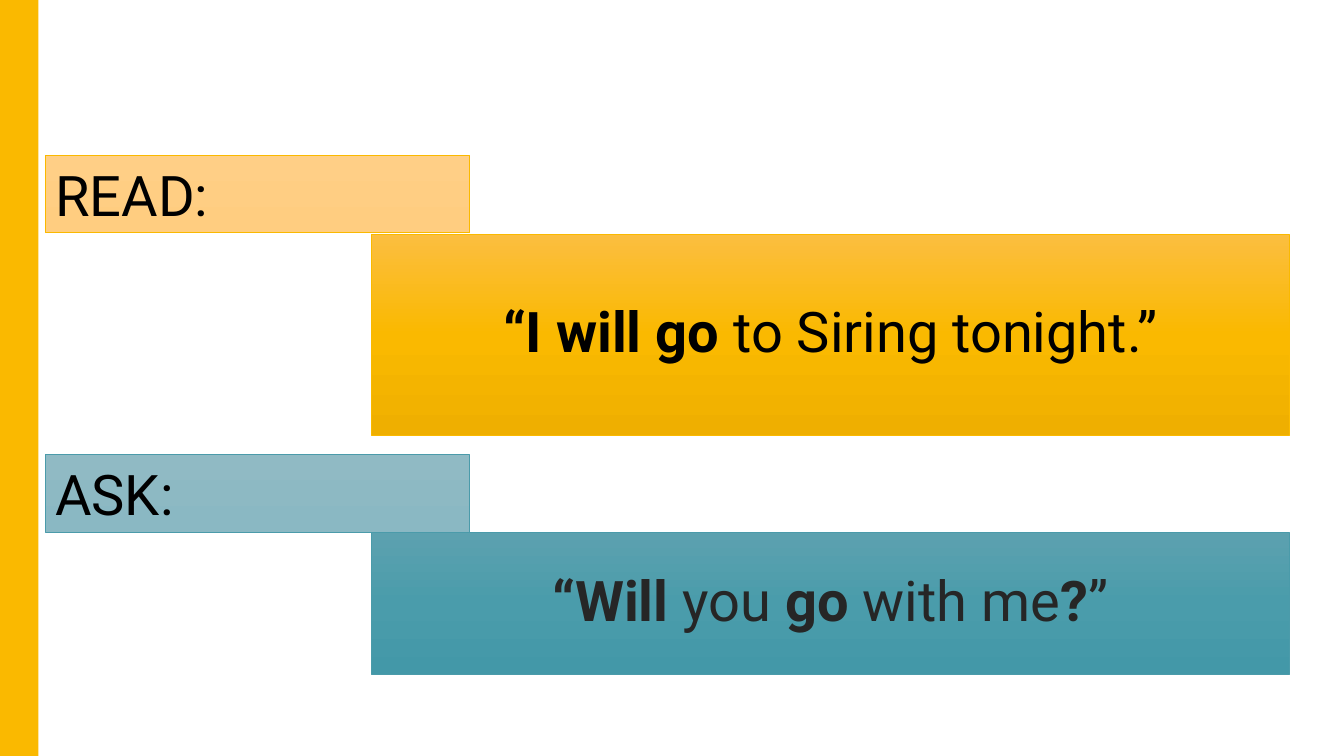
"""Build a slide that pairs a READ statement with an ASK question."""
from copy import deepcopy
from dataclasses import dataclass

from pptx import Presentation
from pptx.dml.color import RGBColor
from pptx.enum import shapes, text
from pptx.oxml.ns import qn
from pptx.util import Inches, Pt


@dataclass(frozen=True)
class Theme:
    font: str = "Roboto"
    size: int = 40
    edge: float = 0.5
    black: str = "000000"
    charcoal: str = "262626"
    amber: str = "FAB900"
    teal: str = "4B9BAA"
    amber_label: tuple = ("FFCF86", "FFCD80")
    teal_label: tuple = ("90BAC4", "8AB8C3")
    amber_panel: tuple = ("FBBE40", "FAB900", "EFAF00")
    teal_panel: tuple = ("5CA1AF", "4A9CAB", "4398A8")


THEME = Theme()


def rgb(value):
    return RGBColor.from_string(value)


def add_rect(s, left, top, width, height):
    sp = s.shapes.add_shape(shapes.MSO_SHAPE.RECTANGLE, Inches(left),
                            Inches(top), Inches(width), Inches(height))
    sp.shadow.inherit = False
    return sp


def add_bar(s):
    sp = add_rect(s, 0, 0, 0.38, 7.5)
    sp.fill.solid()
    sp.fill.fore_color.rgb = rgb(THEME.amber)
    sp.line.fill.background()


def paint(sp, colors, edge):
    sp.fill.gradient()
    sp.fill.gradient_angle = 270
    stops = sp._element.spPr.find(qn("a:gradFill")).find(qn("a:gsLst"))
    for _ in colors[2:]:
        stops.append(deepcopy(stops[-1]))
    for i, (stop, color) in enumerate(zip(sp.fill.gradient_stops, colors)):
        stop.position = i / (len(colors) - 1)
        stop.color.rgb = rgb(color)
    sp.line.color.rgb = rgb(edge)
    sp.line.width = Pt(THEME.edge)


def write(sp, runs, color, align, anchor):
    tf = sp.text_frame
    tf.word_wrap = True
    tf.auto_size = text.MSO_AUTO_SIZE.NONE
    tf.vertical_anchor = anchor
    p = tf.paragraphs[0]
    p.alignment = align
    p.font.name = THEME.font
    p.font.size = Pt(THEME.size)
    p.font.color.rgb = rgb(color)
    for words, bold in runs:
        r = p.add_run()
        r.text = words
        r.font.bold = bold
    return tf


def add_label(s, top, words, colors, edge):
    sp = add_rect(s, 0.45, top, 4.21, 0.77)
    paint(sp, colors, edge)
    write(sp, [(words, False)], THEME.black, text.PP_ALIGN.LEFT,
          text.MSO_ANCHOR.TOP)


def format_panel(sp, top, height, runs, color, colors, edge):
    sp.left, sp.top = Inches(3.68), Inches(top)
    sp.width, sp.height = Inches(9.11), Inches(height)
    paint(sp, colors, edge)
    tf = write(sp, runs, color, text.PP_ALIGN.CENTER, text.MSO_ANCHOR.MIDDLE)
    tf.margin_left = tf.margin_right = Inches(0.2)
    tf.margin_top = tf.margin_bottom = Inches(0.2)
    tf.paragraphs[0].line_spacing = 0.9


def main():
    prs = Presentation()
    prs.slide_width, prs.slide_height = Inches(13.33), Inches(7.5)
    s = prs.slides.add_slide(prs.slide_layouts.get_by_name("Title Only"))

    add_bar(s)
    add_label(s, 1.54, "READ:", THEME.amber_label, THEME.amber)
    format_panel(s.shapes.title, 2.32, 2,
                 [("“I will go ", True), ("to Siring tonight.”", False)],
                 THEME.black, THEME.amber_panel, THEME.amber)

    add_label(s, 4.51, "ASK:", THEME.teal_label, THEME.teal)
    format_panel(add_rect(s, 3.68, 5.28, 9.11, 1.41), 5.28, 1.41,
                 [("“Will ", True), ("you ", False), ("go", True),
                  (" with me", False), ("?", True), ("”", False)],
                 THEME.charcoal, THEME.teal_panel, THEME.teal)

    prs.save("out.pptx")


if __name__ == "__main__":
    main()
